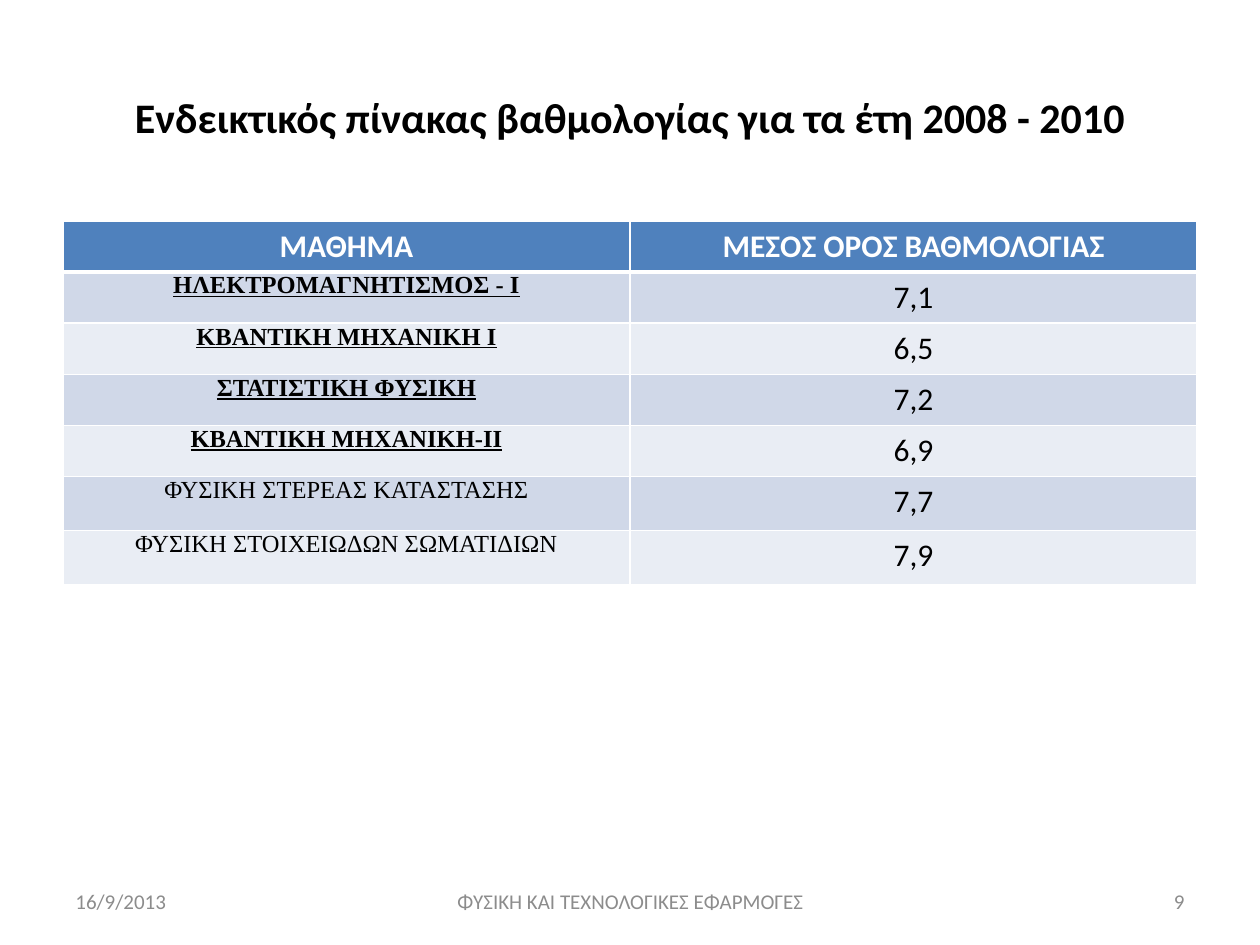
"""Build a slide with a table of average course grades."""
from dataclasses import dataclass

from lxml.etree import SubElement
from pptx import Presentation
from pptx.dml.color import RGBColor as RGB
from pptx.enum.text import MSO_ANCHOR as ANCHOR, PP_ALIGN as ALIGN
from pptx.oxml.ns import qn
from pptx.util import Emu, Pt

EMU_PER_PX = 914400 / 126
COLORS = {
    "text": "000000", "white": "FFFFFF", "header": "4F81BD",
    "odd": "D0D8E8", "even": "E9EDF4", "footer": "8C8C8C",
}


@dataclass
class Course:
    name: str
    grade: str
    core: bool
    height: int = 51


@dataclass
class Footer:
    text: str
    left: int
    width: int
    align: ALIGN


HEADINGS = ("ΜΑΘΗΜΑ", "ΜΕΣΟΣ ΟΡΟΣ ΒΑΘΜΟΛΟΓΙΑΣ")
COURSES = [
    Course("ΗΛΕΚΤΡΟΜΑΓΝΗΤΙΣΜΟΣ - Ι", "7,1", True),
    Course("ΚΒΑΝΤΙΚΗ ΜΗΧΑΝΙΚΗ Ι", "6,5", True),
    Course("ΣΤΑΤΙΣΤΙΚΗ ΦΥΣΙΚΗ", "7,2", True),
    Course("ΚΒΑΝΤΙΚΗ ΜΗΧΑΝΙΚΗ-ΙΙ", "6,9", True),
    Course("ΦΥΣΙΚΗ ΣΤΕΡΕΑΣ ΚΑΤΑΣΤΑΣΗΣ", "7,7", False, 54),
    Course("ΦΥΣΙΚΗ ΣΤΟΙΧΕΙΩΔΩΝ ΣΩΜΑΤΙΔΙΩΝ", "7,9", False, 54),
]
FOOTERS = [
    Footer("16/9/2013", 63, 294, ALIGN.LEFT),
    Footer("ΦΥΣΙΚΗ ΚΑΙ ΤΕΧΝΟΛΟΓΙΚΕΣ ΕΦΑΡΜΟΓΕΣ", 431, 399, ALIGN.CENTER),
    Footer("9", 903, 294, ALIGN.RIGHT),
]


def px(n: int) -> Emu:
    return Emu(round(n * EMU_PER_PX))


def write(tf, text: str, size: int, color: str, align=ALIGN.CENTER,
          font: str = "Calibri", bold: bool = False, underline: bool = False) -> None:
    p = tf.paragraphs[0]
    p.text, p.alignment = text, align
    p.font.name, p.font.size = font, Pt(size)
    p.font.bold, p.font.underline = bold, underline
    p.font.color.rgb = RGB.from_string(COLORS[color])


def style_cell(cell, fill: str, top: int = 1, bottom: int = 1) -> None:
    tc_pr = cell._tc.get_or_add_tcPr()
    for side, width in (("L", 1), ("R", 1), ("T", top), ("B", bottom)):
        ln = SubElement(tc_pr, qn(f"a:ln{side}"), w=str(Pt(width)))
        SubElement(SubElement(ln, qn("a:solidFill")), qn("a:srgbClr"), val=COLORS["white"])
    cell.fill.solid()
    cell.fill.fore_color.rgb = RGB.from_string(COLORS[fill])


def add_title(s, text: str) -> None:
    sp = s.shapes.title
    sp.left, sp.top, sp.width, sp.height = px(63), px(38), px(1134), px(158)
    sp.text_frame.vertical_anchor = ANCHOR.MIDDLE
    write(sp.text_frame, text, 24, "text", bold=True)


def add_grades(s, courses: list[Course]) -> None:
    height = 51 + sum(c.height for c in courses)
    table = s.shapes.add_table(len(courses) + 1, 2, px(63), px(221),
                               px(1134), px(height)).table
    table.rows[0].height = px(51)
    for cell, heading in zip(table.rows[0].cells, HEADINGS):
        style_cell(cell, "header", bottom=3)
        write(cell.text_frame, heading, 18, "white", bold=True)
    for i, course in enumerate(courses, 1):
        table.rows[i].height = px(course.height)
        name, grade = table.rows[i].cells
        for cell in (name, grade):
            style_cell(cell, "odd" if i % 2 else "even", top=3 if i == 1 else 1)
        name.margin_left = name.margin_right = px(9)
        name.margin_top = name.margin_bottom = 0
        write(name.text_frame, course.name, 14, "text", font="Times New Roman",
              bold=course.core, underline=course.core)
        write(grade.text_frame, course.grade, 18, "text")


def add_footer(s, footer: Footer) -> None:
    tf = s.shapes.add_textbox(px(footer.left), px(876), px(footer.width), px(50)).text_frame
    tf.word_wrap = True
    tf.vertical_anchor = ANCHOR.MIDDLE
    write(tf, footer.text, 12, "footer", footer.align)


def main() -> None:
    prs = Presentation()
    prs.slide_width, prs.slide_height = px(1260), px(945)
    s = prs.slides.add_slide(prs.slide_layouts[5])
    add_title(s, "Ενδεικτικός πίνακας βαθμολογίας για τα έτη 2008 - 2010")
    add_grades(s, COURSES)
    for footer in FOOTERS:
        add_footer(s, footer)
    prs.save("out.pptx")


if __name__ == "__main__":
    main()
